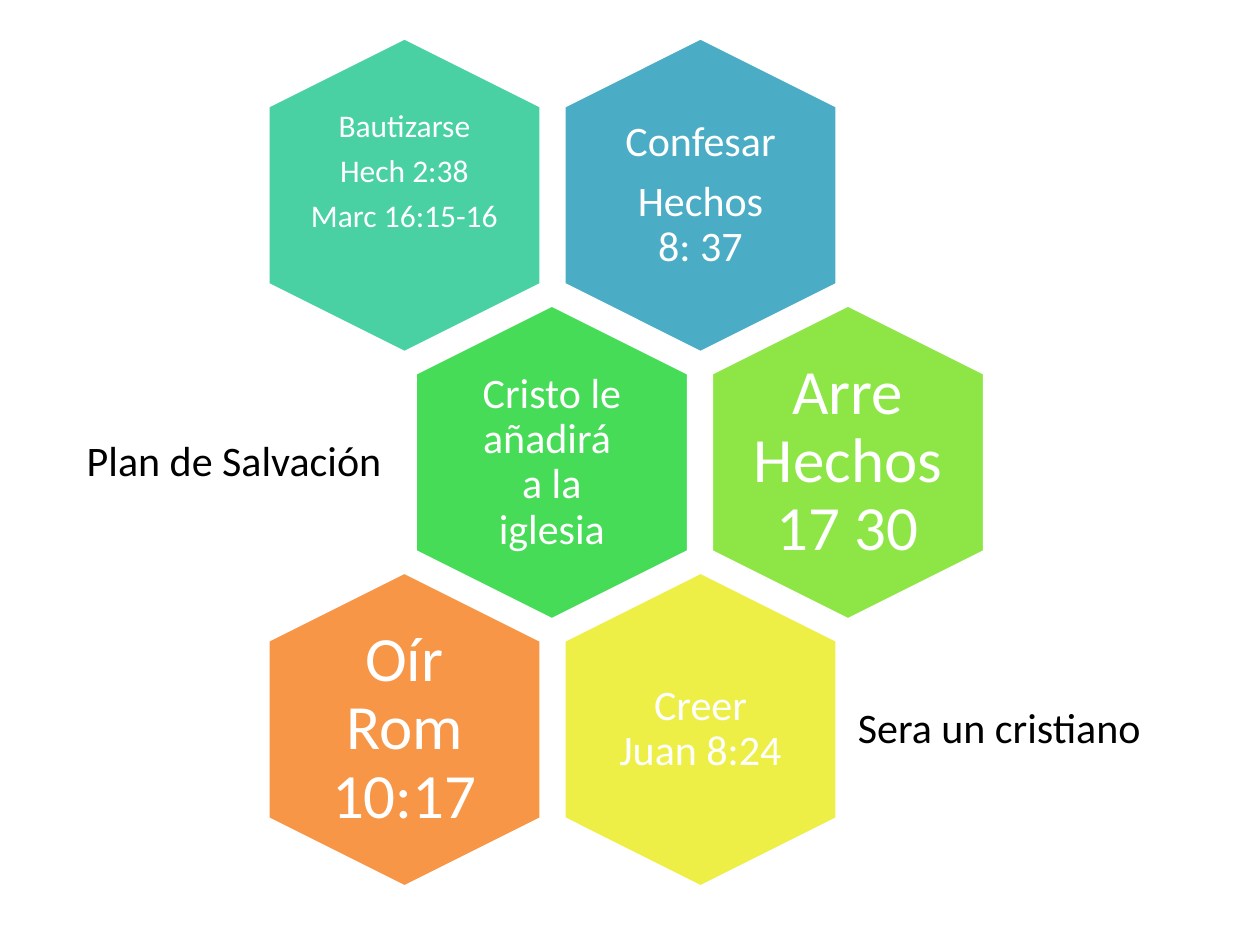
from pptx import Presentation
from pptx.dml.color import RGBColor
from pptx.enum.shapes import MSO_SHAPE as Shape
from pptx.enum.text import MSO_ANCHOR as Anchor, PP_ALIGN as Align
from pptx.util import Inches, Pt

HEX_LENGTH, HEX_WIDTH = 2.5, 2.17
LABEL_WIDTH, LABEL_HEIGHT = 1.5, 1.72
FIRST_X, FIRST_Y = 3.21, 1.55
COLUMN_STEP, ROW_STEP, ROW_SHIFT = 2.35, 2.12, 1.17
CAPTION_HEIGHT = 1.5

HEXAGONS = [
    (0, 1, "4BACC6", ["Confesar", "Hechos 8: 37"], {"inset": 0.1}),
    (0, 0, "49D1A3", ["Bautizarse", "Hech 2:38", "Marc 16:15-16"],
     {"size": 18, "bottom": 0.36}),
    (1, 0, "47DC57", ["Cristo le añadirá  a la iglesia"], {"inset": 0.1}),
    (1, 1, "8DE646", ["Arre Hechos 17 30"], {"size": 36}),
    (2, 1, "EEEF46", ["Creer Juan 8:24"], {"inset": 0.1}),
    (2, 0, "F79646", ["Oír Rom 10:17"], {"size": 36}),
]
CAPTIONS = [
    (1, 0.5, 2.7, "Plan de Salvación ", Align.RIGHT),
    (2, 6.71, 2.79, "Sera un cristiano", Align.LEFT),
]


def color(value):
    """Turn a hex string into a colour."""
    return RGBColor.from_string(value)


def add_text(page, bounds, lines, size=24, ink="FFFFFF", align=Align.CENTER,
             inset=0, bottom=None):
    """Add a vertically centred text box with one paragraph per line."""
    box = page.shapes.add_textbox(*map(Inches, bounds))
    frame = box.text_frame
    frame.word_wrap = True
    frame.vertical_anchor = Anchor.MIDDLE
    frame.margin_left = frame.margin_right = frame.margin_top = Inches(inset)
    frame.margin_bottom = Inches(inset if bottom is None else bottom)
    for index, line in enumerate(lines):
        para = frame.add_paragraph() if index else frame.paragraphs[0]
        para.alignment = align
        para.line_spacing = 0.9
        para.space_after = Pt(size * 0.35)
        span = para.add_run()
        span.text = line
        span.font.name = "Calibri"
        span.font.size = Pt(size)
        span.font.color.rgb = color(ink)


def centered(x, y, width, height):
    """Return the bounds of a box around a centre point."""
    return x - width / 2, y - height / 2, width, height


def add_hexagon(page, center, fill, lines, text_format):
    """Add an upright hexagon with its label around a centre point."""
    bounds = centered(*center, HEX_LENGTH, HEX_WIDTH)
    hexagon = page.shapes.add_shape(Shape.HEXAGON, *map(Inches, bounds))
    hexagon.rotation = 90
    hexagon.adjustments[0] = 0.25
    hexagon.shadow.inherit = False
    hexagon.fill.solid()
    hexagon.fill.fore_color.rgb = color(fill)
    hexagon.line.color.rgb = color("FFFFFF")
    hexagon.line.width = Pt(2)
    label = centered(*center, LABEL_WIDTH, LABEL_HEIGHT)
    add_text(page, label, lines, **text_format)


def add_honeycomb(page, x, y):
    """Add the staggered hexagons from the first centre point."""
    for row, column, fill, lines, text_format in HEXAGONS:
        center = (x + column * COLUMN_STEP + row % 2 * ROW_SHIFT,
                  y + row * ROW_STEP)
        add_hexagon(page, center, fill, lines, text_format)


def add_captions(page, y):
    """Add the captions beside the honeycomb rows."""
    for row, left, width, text, align in CAPTIONS:
        top = y + row * ROW_STEP - CAPTION_HEIGHT / 2
        add_text(page, (left, top, width, CAPTION_HEIGHT), [text],
                 ink="000000", align=align, inset=0.1)


def main():
    """Build and save the deck."""
    deck = Presentation()
    deck.slide_width, deck.slide_height = Inches(10), Inches(7.5)
    page = deck.slides.add_slide(deck.slide_layouts[6])
    add_honeycomb(page, FIRST_X, FIRST_Y)
    add_captions(page, FIRST_Y)
    deck.save("out.pptx")


if __name__ == "__main__":
    main()
